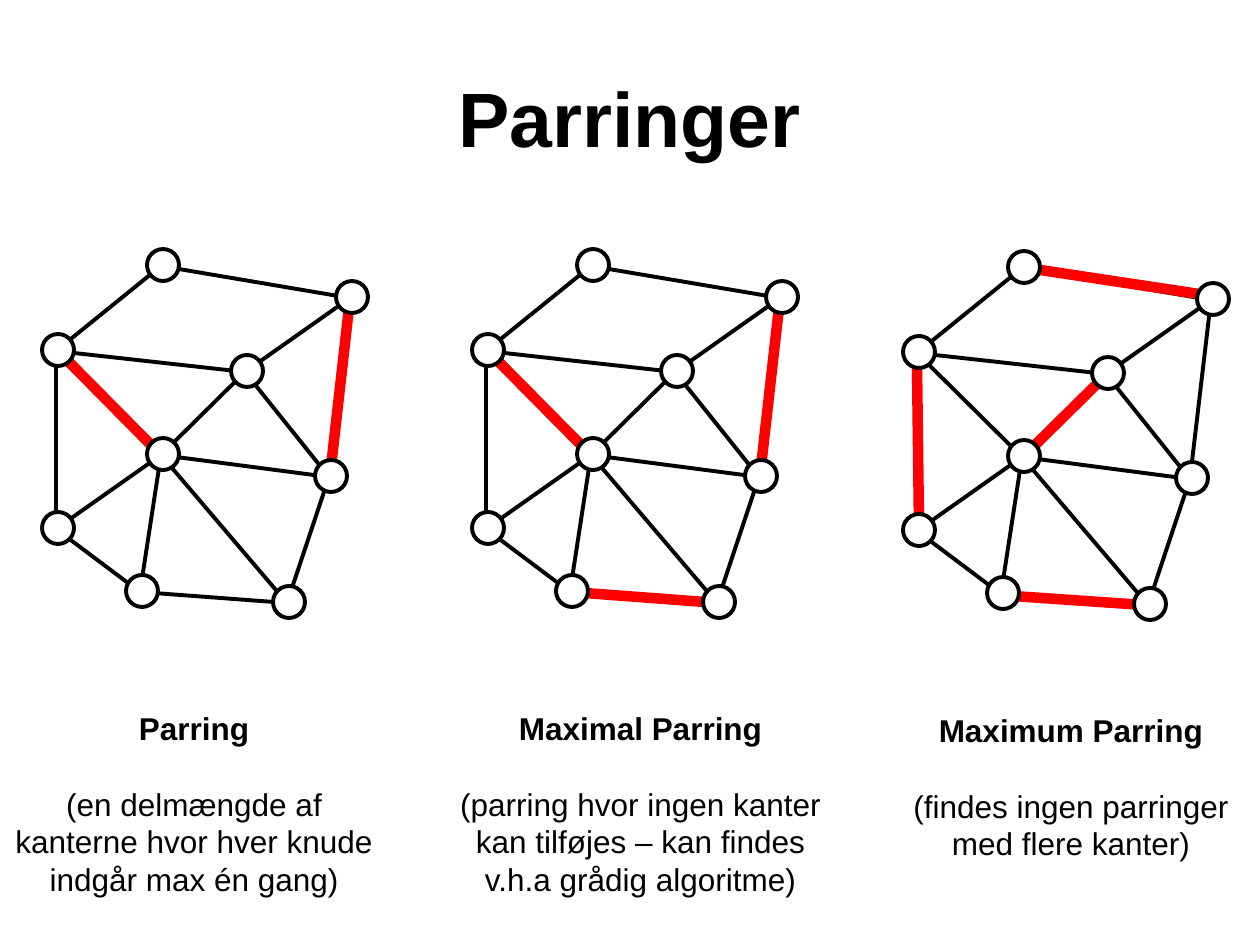
from pptx import Presentation
from pptx.dml.color import RGBColor
from pptx.enum.shapes import MSO_CONNECTOR, MSO_SHAPE
from pptx.enum.text import MSO_ANCHOR, MSO_AUTO_SIZE, PP_ALIGN
from pptx.oxml.ns import qn
from pptx.util import Emu, Pt
from lxml import etree

STRAIGHT = MSO_CONNECTOR.STRAIGHT
OVAL = MSO_SHAPE.OVAL
MIDDLE = MSO_ANCHOR.MIDDLE
GROW = MSO_AUTO_SIZE.SHAPE_TO_FIT_TEXT
CENTER = PP_ALIGN.CENTER

COLORS = {"ink": "000000", "paper": "FFFFFF", "match": "FF0000"}
SCALE = 914400 / 126
NODE_SIZE = 32
EDGE_SHIFT = (-2, 1)

NODES = {
    "left": (58, 350),
    "lower": (58, 528),
    "top": (163, 265),
    "bottom": (142, 591),
    "hub": (163, 454),
    "inner": (247, 371),
    "corner": (352, 297),
    "south": (289, 602),
    "east": (331, 476),
}
EDGES = [
    ("top", "corner"), ("corner", "east"), ("east", "inner"), ("hub", "inner"),
    ("east", "south"), ("bottom", "south"), ("lower", "bottom"), ("lower", "hub"),
    ("lower", "left"), ("left", "inner"), ("left", "hub"), ("left", "top"),
    ("hub", "bottom"), ("hub", "south"), ("inner", "corner"), ("hub", "east"),
]
CORNER_EAST = (350, 299, 330, 476)
LEFT_HUB = (57, 350, 162, 456)
BOTTOM_SOUTH = (141, 592, 288, 603)
GRAPHS = [
    {"shift": (0, 0), "matching": [CORNER_EAST, LEFT_HUB],
     "caption": (0, 703, 388, 204), "heading": "Parring",
     "note": "(en delmængde af kanterne hvor hver knude indgår max én gang)"},
    {"shift": (430, 0), "matching": [CORNER_EAST, BOTTOM_SOUTH, LEFT_HUB],
     "caption": (441, 703, 399, 204), "heading": "Maximal Parring",
     "note": "(parring hvor ingen kanter kan tilføjes – kan findes v.h.a grådig algoritme)"},
    {"shift": (861, 2),
     "matching": [(166, 266, 351, 294), (163, 454, 248, 370),
                  (137, 593, 283, 603), (56, 360, 58, 521)],
     "caption": (882, 705, 378, 165), "heading": "Maximum Parring",
     "note": "(findes ingen parringer med flere kanter)"},
]


def write(para, text, size=18, bold=False, before=0):
    para.alignment = CENTER
    para.space_before = Pt(before)
    span = para.add_run()
    span.text = text
    span.font.name = "Arial"
    span.font.size = Pt(size)
    span.font.bold = bold
    span.font.color.rgb = RGBColor.from_string(COLORS["ink"])


def draw_line(page, ends, shift, color, width):
    dx, dy = shift
    x1, y1, x2, y2 = ends
    points = (x1 + dx, y1 + dy, x2 + dx, y2 + dy)
    line = page.shapes.add_connector(STRAIGHT, *[Emu(round(n * SCALE)) for n in points])
    line.line.color.rgb = RGBColor.from_string(COLORS[color])
    line.line.width = Pt(width)
    etree.SubElement(line._element.spPr, qn("a:effectLst"))


deck = Presentation()
deck.slide_width = Emu(round(1260 * SCALE))
deck.slide_height = Emu(round(945 * SCALE))
page = deck.slides.add_slide(deck.slide_layouts[5])

title = page.shapes.title
title.left, title.top, title.width, title.height = [
    Emu(round(n * SCALE)) for n in (63, 38, 1134, 157)]
title.text_frame.vertical_anchor = MIDDLE
write(title.text_frame.paragraphs[0], "Parringer", size=44, bold=True)

for graph in GRAPHS:
    dx, dy = graph["shift"]
    edge_shift = (dx + EDGE_SHIFT[0], dy + EDGE_SHIFT[1])
    for start, end in EDGES:
        draw_line(page, NODES[start] + NODES[end], edge_shift, "ink", 2.25)
    for ends in graph["matching"]:
        draw_line(page, ends, graph["shift"], "match", 6)

    for x, y in NODES.values():
        corner = (x + dx - NODE_SIZE / 2, y + dy - NODE_SIZE / 2)
        node = page.shapes.add_shape(
            OVAL, *[Emu(round(n * SCALE)) for n in (*corner, NODE_SIZE, NODE_SIZE)])
        node.shadow.inherit = False
        node.fill.solid()
        node.fill.fore_color.rgb = RGBColor.from_string(COLORS["paper"])
        node.line.color.rgb = RGBColor.from_string(COLORS["ink"])
        node.line.width = Pt(2.25)

    box = page.shapes.add_textbox(*[Emu(round(n * SCALE)) for n in graph["caption"]])
    frame = box.text_frame
    frame.word_wrap = True
    frame.auto_size = GROW
    write(frame.paragraphs[0], graph["heading"], bold=True)
    write(frame.add_paragraph(), graph["note"], before=21.5)

deck.save("out.pptx")
